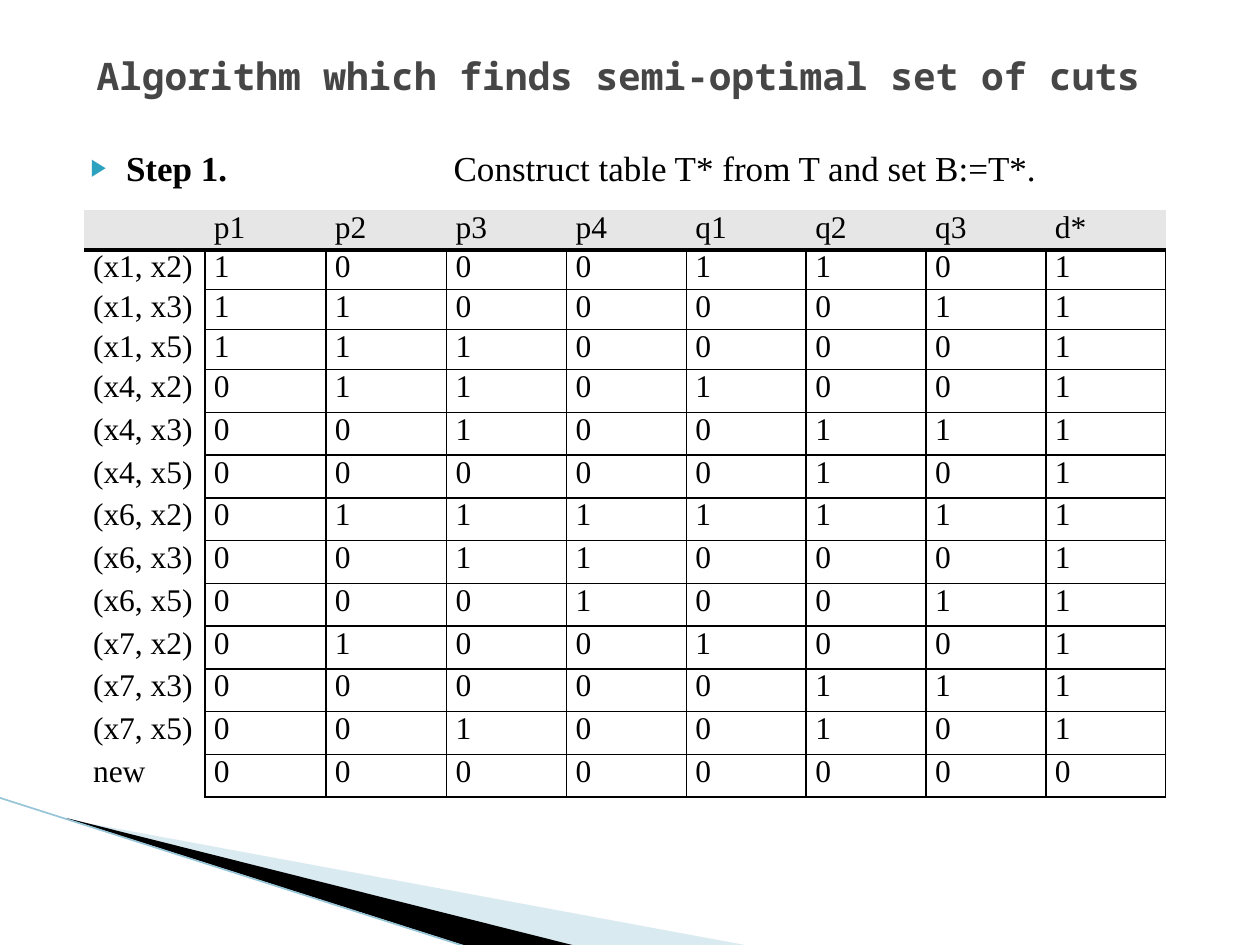
from lxml import etree
from pptx import Presentation
from pptx.dml.color import RGBColor
from pptx.enum import shapes, text
from pptx.oxml import ns, parse_xml
from pptx.util import Pt

BLACK = RGBColor(0x00, 0x00, 0x00)
TITLE_GREY = RGBColor(0x46, 0x46, 0x46)
HEADER_GREY = RGBColor(0xE6, 0xE6, 0xE6)
TEAL = RGBColor(0x2D, 0xA2, 0xBF)
PALE_BLUE = RGBColor(0xA0, 0xCB, 0xDC)
EDGE_BLUE = RGBColor(0x97, 0xC5, 0xD8)
SERIF, MONO = "Times New Roman", "Noto Sans Mono"

TITLE = "Algorithm which finds semi-optimal set of cuts"
STEP = [("Step 1.\t\t", True), ("Construct table T* from T and set B:=T*.", False)]
HEADER = ["", "p1", "p2", "p3", "p4", "q1", "q2", "q3", "d*"]
PAIRS = [
    ("(x1, x2)", "10001101"),
    ("(x1, x3)", "11000011"),
    ("(x1, x5)", "11100001"),
    ("(x4, x2)", "01101001"),
    ("(x4, x3)", "00100111"),
    ("(x4, x5)", "00000101"),
    ("(x6, x2)", "01111111"),
    ("(x6, x3)", "00110001"),
    ("(x6, x5)", "00010011"),
    ("(x7, x2)", "01001001"),
    ("(x7, x3)", "00000111"),
    ("(x7, x5)", "00100101"),
    ("new", "00000000"),
]
COL_WIDTHS = [69.1] * 3 + [68.5] * 6
ROW_HEIGHTS = [22.8] * 4 + [24.45] * 10

# Corner wedges: points, colour, opacity in percent
WEDGES = [
    ([(39.6, 468.5), (428.4, 540.5), (328.3, 540.5), (39.6, 468)], PALE_BLUE, 40),
    ([(38.2, 467.5), (329, 540.5), (267.8, 541), (38.9, 468)], BLACK, 100),
]
EDGE = (-0.5, 455.8, 267.1, 541.2)


def add_run(p, words, *, size, font=SERIF, color=BLACK, bold=False):
    r = p.add_run()
    r.text = words
    r.font.size, r.font.name, r.font.bold = Pt(size), font, bold
    r.font.color.rgb = color


def place(sp, left, top, width, height):
    sp.left, sp.top, sp.width, sp.height = map(Pt, (left, top, width, height))
    tf = sp.text_frame
    tf.word_wrap = True
    tf.auto_size = text.MSO_AUTO_SIZE.NONE
    tf.vertical_anchor = text.MSO_ANCHOR.TOP
    return tf


def add_wedge(s, points, color, opacity):
    start, *rest = [(Pt(x), Pt(y)) for x, y in points]
    builder = s.shapes.build_freeform(*start)
    builder.add_line_segments(rest)
    sp = builder.convert_to_shape()
    sp.shadow.inherit = False
    sp.line.fill.background()
    sp.fill.solid()
    sp.fill.fore_color.rgb = color
    if opacity < 100:
        clr = sp.fill._xPr.find(".//" + ns.qn("a:srgbClr"))
        etree.SubElement(clr, ns.qn("a:alpha"), val=str(opacity * 1000))


def add_edge(s):
    line = s.shapes.add_connector(shapes.MSO_CONNECTOR.STRAIGHT, *map(Pt, EDGE))
    line.line.color.rgb = EDGE_BLUE
    line.line.width = Pt(0.95)
    etree.SubElement(line._element.spPr, ns.qn("a:effectLst"))


def add_bullet(p):
    """Give the paragraph a teal triangle, hanging indent and one-inch tabs."""
    pPr = p._p.get_or_add_pPr()
    for name, length in (("marL", 28.8), ("indent", -20.2), ("defTabSz", 72)):
        pPr.set(name, str(Pt(length)))
    for xml in (f'buClr {{}}><a:srgbClr val="{TEAL}"/></a:buClr>',
                'buSzPct {} val="68000"/>',
                'buChar {} char="▶"/>'):
        pPr.append(parse_xml("<a:" + xml.format(ns.nsdecls("a"))))


def set_borders(cell, **widths):
    """Draw the named sides (L, R, T, B) in black and clear the others."""
    tcPr = cell._tc.get_or_add_tcPr()
    for i, side in enumerate("LRTB"):
        width = widths.get(side, 0)
        fill = (f'<a:solidFill><a:srgbClr val="{BLACK}"/></a:solidFill>'
                if width else "<a:noFill/>")
        tcPr.insert(i, parse_xml(
            f'<a:ln{side} {ns.nsdecls("a")} w="{Pt(width)}">{fill}</a:ln{side}>'))


def cell_borders(row, col):
    if row == 0:
        return {"B": 2.25}
    top = 2.25 if row == 1 else 1
    if col == 0:
        return {"R": 1, "T": 2.25} if row == 1 else {"R": 1}
    return {"L": 1, "R": 1, "T": top, "B": 1}


def add_cut_table(s):
    rows = [HEADER] + [[pair, *bits] for pair, bits in PAIRS]
    table = s.shapes.add_table(len(rows), len(HEADER), Pt(48), Pt(120),
                               Pt(sum(COL_WIDTHS)), Pt(sum(ROW_HEIGHTS))).table
    table.first_row = table.horz_banding = False
    for column, width in zip(table.columns, COL_WIDTHS):
        column.width = Pt(width)
    for row, height in zip(table.rows, ROW_HEIGHTS):
        row.height = Pt(height)
    for i, values in enumerate(rows):
        for j, value in enumerate(values):
            cell = table.cell(i, j)
            cell.margin_left = cell.margin_right = Pt(5.2)
            cell.margin_top = cell.margin_bottom = 0
            if i == 0:
                cell.fill.solid()
                cell.fill.fore_color.rgb = HEADER_GREY
            else:
                cell.fill.background()
            set_borders(cell, **cell_borders(i, j))
            if value:
                add_run(cell.text_frame.paragraphs[0], value, size=18)


def main():
    prs = Presentation()
    prs.slide_width, prs.slide_height = Pt(720), Pt(540)
    s = prs.slides.add_slide(prs.slide_layouts[1])

    for wedge in WEDGES:
        add_wedge(s, *wedge)
    add_edge(s)

    tf = place(s.shapes.title, 48, 30.2, 648, 54)
    tf.margin_top = 0
    p = tf.paragraphs[0]
    p.alignment = text.PP_ALIGN.LEFT
    add_run(p, TITLE, size=21.6, font=MONO, color=TITLE_GREY, bold=True)

    tf = place(s.placeholders[1], 36, 77.8, 648, 395.3)
    tf.margin_top = Pt(6)
    p = tf.paragraphs[0]
    p.space_before = Pt(0)
    add_bullet(p)
    for words, bold in STEP:
        add_run(p, words, size=20, bold=bold)

    add_cut_table(s)
    prs.save("out.pptx")


if __name__ == "__main__":
    main()
